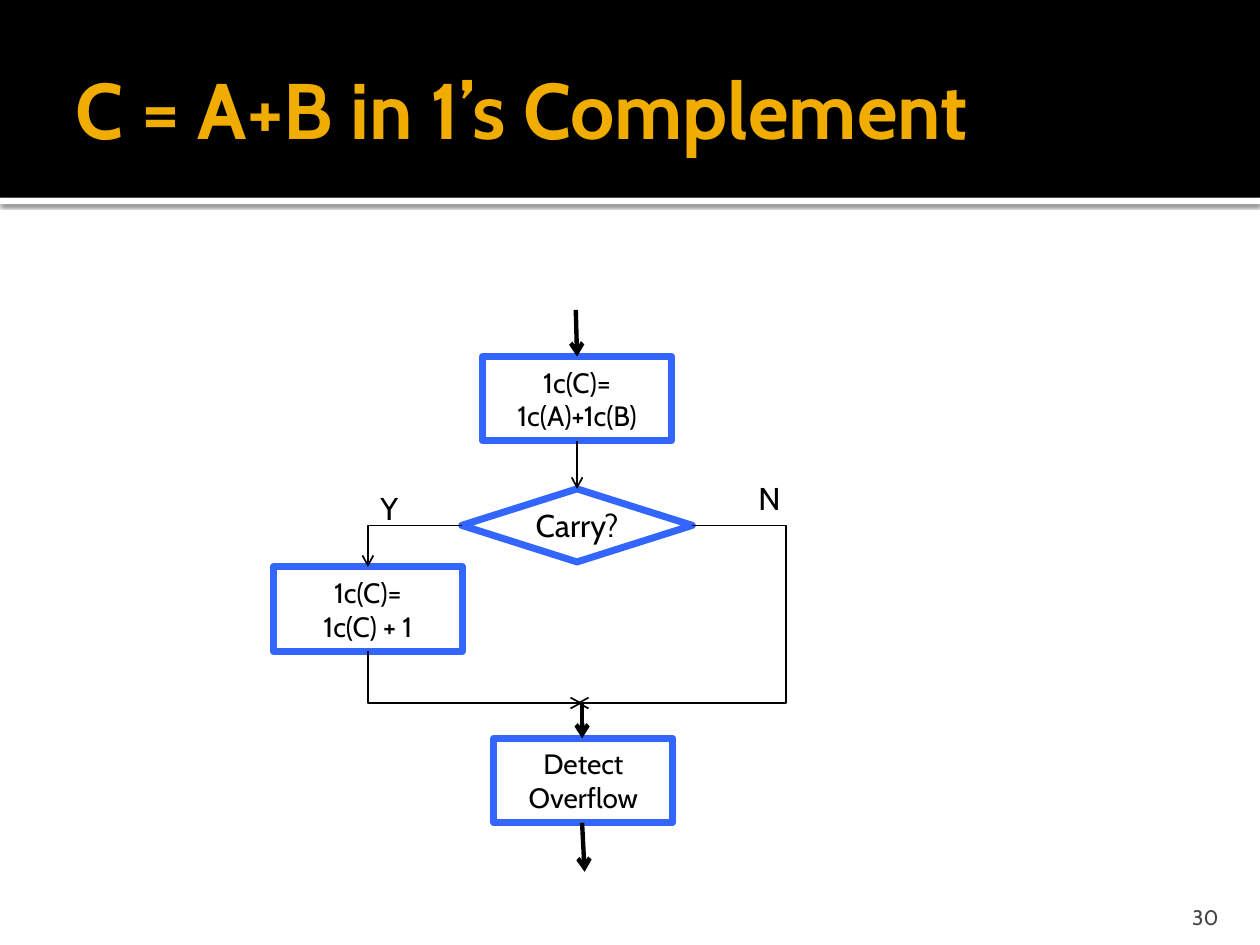
from dataclasses import dataclass

from lxml import etree
from pptx import Presentation
from pptx.dml.color import RGBColor
from pptx.enum.shapes import MSO_CONNECTOR, MSO_SHAPE
from pptx.enum.text import MSO_ANCHOR, MSO_AUTO_SIZE, PP_ALIGN
from pptx.oxml.ns import qn
from pptx.util import Inches, Pt

RECT, DECISION = MSO_SHAPE.RECTANGLE, MSO_SHAPE.FLOWCHART_DECISION
STRAIGHT, ELBOW = MSO_CONNECTOR.STRAIGHT, MSO_CONNECTOR.ELBOW
LEFT, CENTER, RIGHT = PP_ALIGN.LEFT, PP_ALIGN.CENTER, PP_ALIGN.RIGHT
TOP, MIDDLE, BOTTOM = MSO_ANCHOR.TOP, MSO_ANCHOR.MIDDLE, MSO_ANCHOR.BOTTOM
TITLE_ONLY = 5


@dataclass(frozen=True)
class Theme:
    font: str = "Cabin"
    band: str = "000000"
    rule: str = "FFFFFF"
    title: str = "F0AD00"
    ink: str = "000000"
    outline: str = "3366FF"
    page: str = "454545"
    title_size: float = 45
    label_size: float = 18
    step_size: float = 16
    page_size: float = 12
    outline_width: float = 4
    flow_width: float = 2.5
    branch_width: float = 1


THEME = Theme()


def rgb(value):
    return RGBColor.from_string(value)


def inches(*lengths):
    return [Inches(length) for length in lengths]


def write(shape, text, size, color, align=LEFT, bold=False, **frame_format):
    """Fill a shape with text, one paragraph a line."""
    frame = shape.text_frame
    frame.text = text
    for name, value in frame_format.items():
        setattr(frame, name, value)
    for paragraph in frame.paragraphs:
        paragraph.alignment = align
        font = paragraph.runs[0].font
        font.color.rgb = rgb(color)
        font_format = {"name": THEME.font, "size": Pt(size), "bold": bold}
        for name, value in font_format.items():
            setattr(font, name, value)


def add_band(slide, box, color):
    """Add a filled strip behind everything else on the slide."""
    band = slide.shapes.add_shape(RECT, *inches(*box))
    band.shadow.inherit = False
    band.fill.solid()
    band.fill.fore_color.rgb = rgb(color)
    band.line.fill.background()
    slide.shapes._spTree.insert(2, band._element)
    return band


def add_shadow(shape):
    effects = shape._element.spPr.find(qn("a:effectLst"))
    shadow = etree.SubElement(effects, qn("a:outerShdw"), blurRad=str(Pt(2.5)),
                              dist=str(Pt(0.8)), dir="5400000", rotWithShape="0")
    color = etree.SubElement(shadow, qn("a:srgbClr"), val="000000")
    etree.SubElement(color, qn("a:alpha"), val="60000")


def header(slide, box):
    left, top, width, height = box
    add_band(slide, box, THEME.band)
    add_shadow(add_band(slide, (left, top + height, width, 0.05), THEME.rule))

    title = slide.shapes.title
    title_box = inches(left + 0.5, top + 0.17, width - 1, 1.37)
    for name, value in zip(("left", "top", "width", "height"), title_box):
        setattr(title, name, value)
    write(title, "C = A+B in 1’s Complement", THEME.title_size, THEME.title,
          bold=True, vertical_anchor=MIDDLE, auto_size=MSO_AUTO_SIZE.NONE,
          margin_right=Inches(0.05))


def add_step(chart, box, text, size=THEME.step_size, kind=RECT):
    step = chart.shapes.add_shape(kind, *inches(*box))
    step.shadow.inherit = False
    step.fill.background()
    step.line.color.rgb = rgb(THEME.outline)
    step.line.width = Pt(THEME.outline_width)
    write(step, text, size, THEME.ink, CENTER, vertical_anchor=MIDDLE)


def add_branch_label(chart, box, text):
    label = chart.shapes.add_textbox(*inches(*box))
    write(label, text, THEME.label_size, THEME.ink, word_wrap=False,
          vertical_anchor=TOP)


def add_flow(chart, start, end, width=THEME.branch_width, arrow="tailEnd", bent=False):
    """Draw a line; a bent one runs sideways first, then turns once."""
    flow = chart.shapes.add_connector(ELBOW if bent else STRAIGHT,
                                      *inches(*start, *end))
    flow.line.color.rgb = rgb(THEME.ink)
    flow.line.width = Pt(width)
    properties = flow._element.spPr
    if bent:
        properties.find(qn("a:prstGeom")).set("prst", "bentConnector2")
    if arrow:
        etree.SubElement(properties.find(qn("a:ln")), qn(f"a:{arrow}"), type="arrow")
    etree.SubElement(properties, qn("a:effectLst"))


def flowchart(slide, box):
    left, top, width, height = box
    chart = slide.shapes.add_group_shape()
    step_width, step_height = 1.5, 0.67

    axis = left + 2.41
    carry_width, carry_height = 1.83, 0.58
    sum_top, carry_top = top + 0.37, top + 1.42
    carry_left, carry_middle = axis - carry_width / 2, top + 1.71
    add_one_top, overflow_top = top + 2.04, top + 3.4
    add_one_axis = left + step_width / 2
    bypass = left + 4.07
    join = (left + 2.45, top + 3.12)
    exit_axis = join[0]

    add_step(chart, (axis - step_width / 2, sum_top, step_width, step_height),
             "1c(C)=\n1c(A)+1c(B)")
    add_step(chart, (carry_left, carry_top, carry_width, carry_height),
             "Carry?", THEME.label_size, DECISION)
    add_step(chart, (left, add_one_top, step_width, step_height),
             "1c(C)=\n1c(C) + 1")
    add_step(chart, (left + 1.75, overflow_top, 1.42, step_height),
             "Detect Overflow")

    add_branch_label(chart, (left + 0.75, top + 1.37, 0.36, 0.4), "Y")
    add_branch_label(chart, (left + 3.75, top + 1.29, 0.38, 0.4), "N")

    for start, end in (
        ((axis - 0.01, top), (axis, sum_top)),
        (join, (exit_axis, overflow_top)),
        ((exit_axis, overflow_top + step_height), (exit_axis + 0.02, top + height)),
    ):
        add_flow(chart, start, end, THEME.flow_width)

    add_flow(chart, (axis, sum_top + step_height), (axis, carry_top))
    add_flow(chart, (carry_left, carry_middle), (add_one_axis, add_one_top), bent=True)
    add_flow(chart, (carry_left + carry_width, carry_middle), (bypass, carry_middle),
             arrow=None)
    add_flow(chart, join, (add_one_axis, add_one_top + step_height),
             arrow="headEnd", bent=True)
    add_flow(chart, (axis, join[1]), (bypass, carry_middle),
             arrow="headEnd", bent=True)


def page_number(slide, box):
    number = slide.shapes.add_textbox(*inches(*box))
    write(number, "30", THEME.page_size, THEME.page, RIGHT, word_wrap=True,
          vertical_anchor=BOTTOM, margin_bottom=0)


def main():
    deck = Presentation()
    deck.slide_width, deck.slide_height = inches(10, 7.5)
    slide = deck.slides.add_slide(deck.slide_layouts[TITLE_ONLY])
    header(slide, (0, 0, 10, 1.57))
    flowchart(slide, (2.17, 2.46, 4.13, 4.46))
    page_number(slide, (8.97, 7.08, 0.8, 0.3))
    deck.save("out.pptx")


if __name__ == "__main__":
    main()
